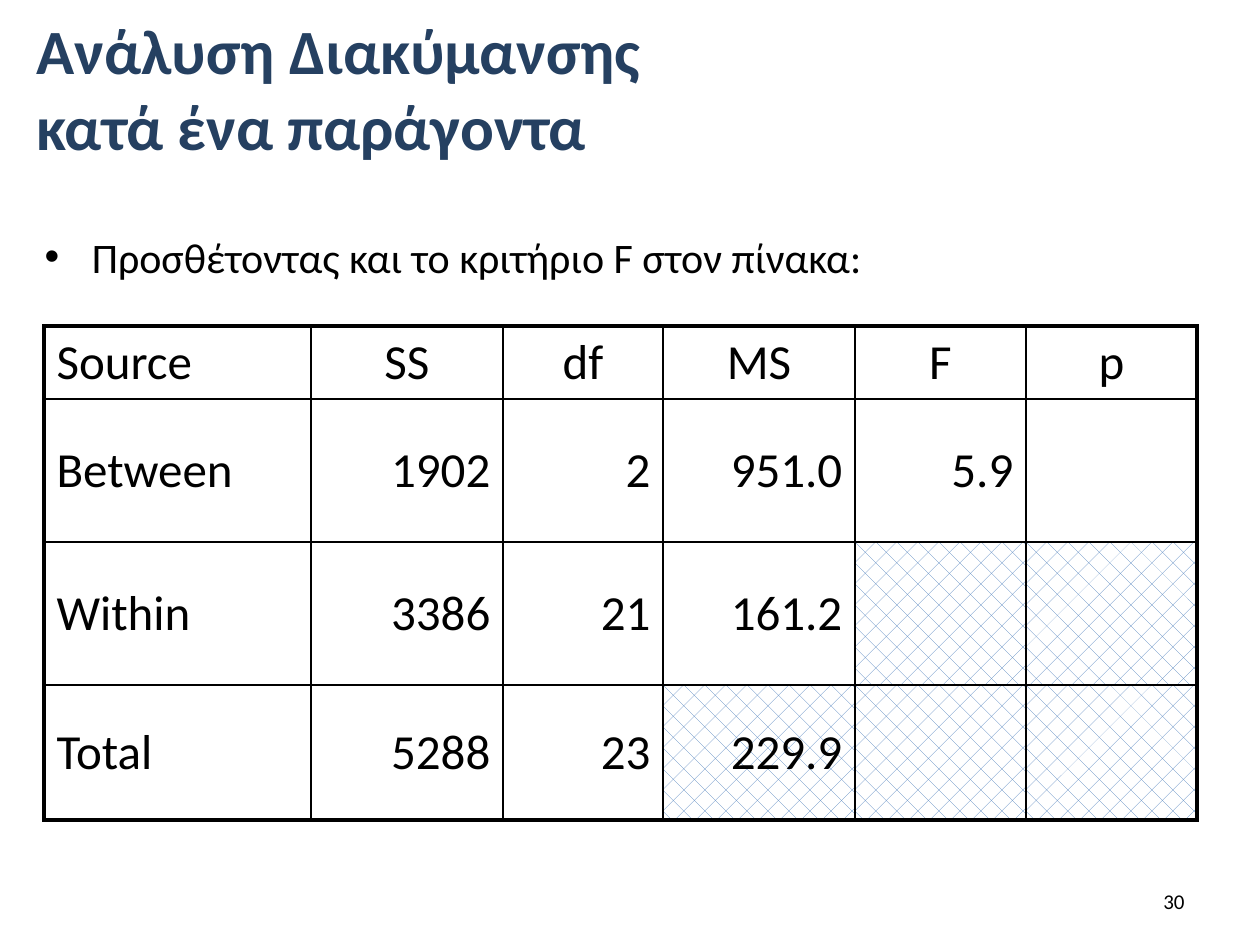
import pptx
import pptx.util
import pptx.dml.color
import pptx.enum.dml
import pptx.enum.text
import pptx.oxml

PX = 914400 / 126
NAVY = pptx.dml.color.RGBColor(0x25, 0x40, 0x61)
BLACK = pptx.dml.color.RGBColor(0, 0, 0)
WHITE = pptx.dml.color.RGBColor(255, 255, 255)
BLUE = pptx.dml.color.RGBColor(0x4F, 0x81, 0xBD)
ALIGN = pptx.enum.text.PP_ALIGN
MIDDLE = pptx.enum.text.MSO_ANCHOR.MIDDLE
TOP = pptx.enum.text.MSO_ANCHOR.TOP

TITLE = "Ανάλυση Διακύμανσης\vκατά ένα παράγοντα"
BODY = "Προσθέτοντας και το κριτήριο F στον πίνακα:"
PAGE = "30"
ROWS = [
    ("Source", "SS", "df", "MS", "F", "p"),
    ("Between", "1902", "2", "951.0", "5.9", ""),
    ("Within", "3386", "21", "161.2", "", ""),
    ("Total", "5288", "23", "229.9", "", ""),
]
HATCHED = {(2, 4), (2, 5), (3, 3), (3, 4), (3, 5)}
COL_WIDTHS = [267, 192, 160, 192, 171, 171]
ROW_HEIGHTS = [73, 143, 143, 135]
THIN, THICK = 1, 2.25


def px(n):
    return pptx.util.Emu(round(n * PX))


def place(s, left, top, width, height):
    s.left, s.top, s.width, s.height = map(px, (left, top, width, height))


def write(tf, text, size=28, color=BLACK, bold=False, align=ALIGN.LEFT):
    p = tf.paragraphs[0]
    p.text = text
    p.alignment = align
    for r in p.runs:
        r.font.name = "Calibri"
        r.font.size = pptx.util.Pt(size)
        r.font.bold = bold
        r.font.color.rgb = color
    return p


def set_frame(s, anchor):
    tf = s.text_frame
    tf.word_wrap = True
    tf.auto_size = pptx.enum.text.MSO_AUTO_SIZE.NONE
    tf.vertical_anchor = anchor
    return tf


def set_borders(cell, **widths):
    """Draw black cell borders; keys are L, R, T, B in schema order."""
    tcPr = cell._tc.get_or_add_tcPr()
    for side, width in widths.items():
        tcPr.append(pptx.oxml.parse_xml(
            f'<a:ln{side} xmlns:a="http://schemas.openxmlformats.org/drawingml/2006/main"'
            f' w="{pptx.util.Pt(width)}"><a:solidFill><a:srgbClr val="{BLACK}"/>'
            f'</a:solidFill></a:ln{side}>'))


def fill_cell(cell, hatched):
    if not hatched:
        cell.fill.background()
        return
    cell.fill.patterned()
    cell.fill.pattern = pptx.enum.dml.MSO_PATTERN.DIAGONAL_BRICK
    cell.fill.fore_color.rgb = BLUE
    cell.fill.back_color.rgb = WHITE


def add_anova_table(slide):
    last_row, last_col = len(ROWS) - 1, len(COL_WIDTHS) - 1
    table = slide.shapes.add_table(
        len(ROWS), len(COL_WIDTHS), px(44), px(326),
        px(sum(COL_WIDTHS)), px(sum(ROW_HEIGHTS))).table
    table.first_row = table.horz_banding = False
    for col, width in zip(table.columns, COL_WIDTHS):
        col.width = px(width)
    for row, height in zip(table.rows, ROW_HEIGHTS):
        row.height = px(height)
    for i, values in enumerate(ROWS):
        for j, value in enumerate(values):
            cell = table.cell(i, j)
            cell.vertical_anchor = MIDDLE
            set_borders(cell,
                        L=THIN if j else THICK,
                        R=THICK if j == last_col else THIN,
                        T=THIN if i else THICK,
                        B=THICK if i == last_row else THIN)
            fill_cell(cell, (i, j) in HATCHED)
            align = ALIGN.LEFT if j == 0 else ALIGN.RIGHT if i else ALIGN.CENTER
            write(cell.text_frame, value, align=align)


def main():
    prs = pptx.Presentation()
    prs.slide_width, prs.slide_height = px(1260), px(945)
    slide = prs.slides.add_slide(prs.slide_layouts[1])
    title, body = slide.placeholders

    place(title, 0, 0, 1260, 175)
    p = write(set_frame(title, MIDDLE), TITLE, size=36, color=NAVY, bold=True)
    p._p.get_or_add_pPr().set("marL", str(px(24)))

    add_anova_table(slide)

    place(body, 32, 220, 1134, 95)
    p = write(set_frame(body, TOP), BODY, size=24)
    p.line_spacing = 1.1
    p.space_before = pptx.util.Pt(12)

    number = slide.shapes.add_textbox(px(903), px(876), px(294), px(50))
    write(set_frame(number, MIDDLE), PAGE, size=12, align=ALIGN.RIGHT)

    prs.save("out.pptx")


if __name__ == "__main__":
    main()
